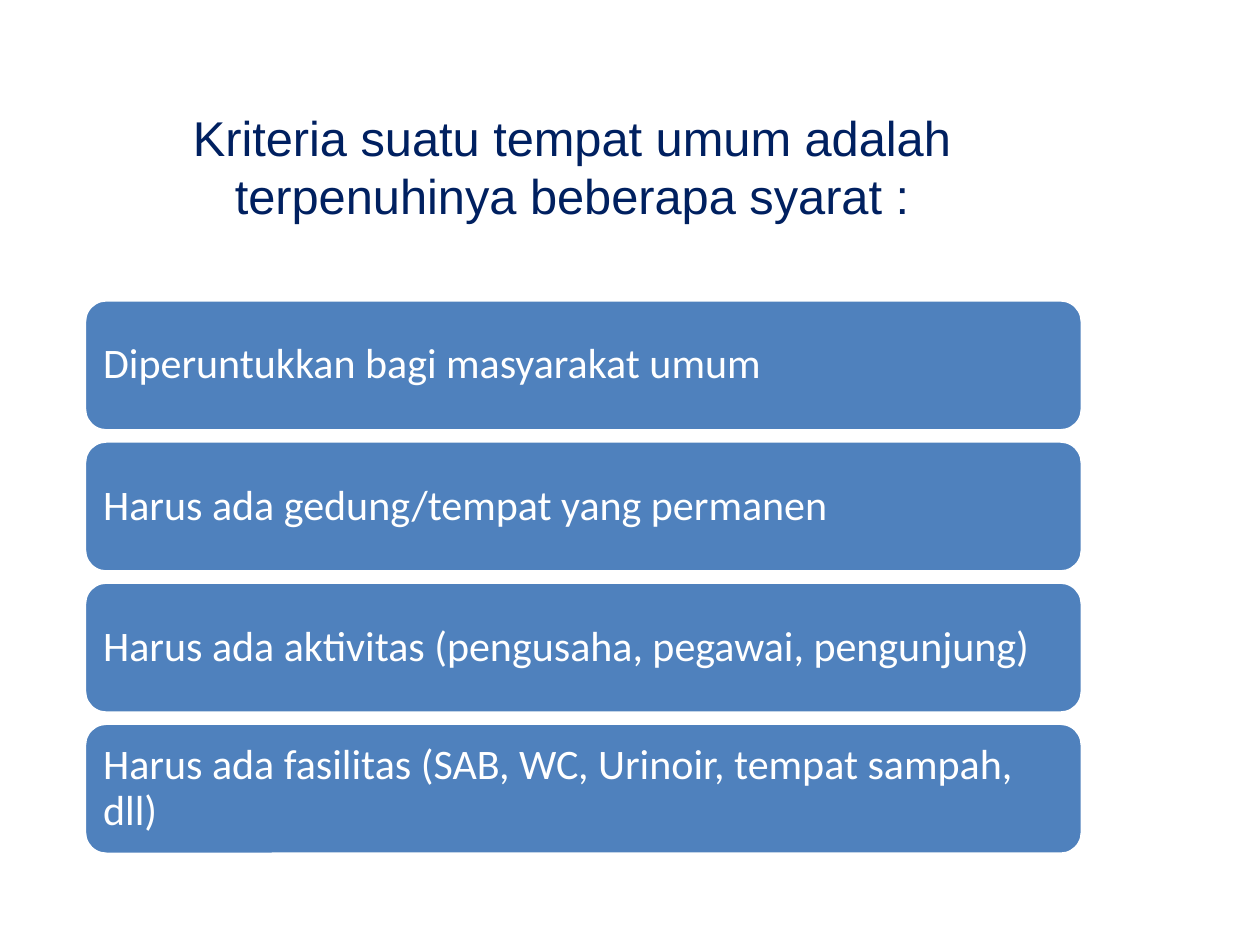
from dataclasses import dataclass

from pptx import Presentation
from pptx.dml.color import RGBColor
from pptx.enum.shapes import MSO_SHAPE
from pptx.enum.text import MSO_ANCHOR, MSO_AUTO_SIZE, PP_ALIGN
from pptx.util import Inches, Pt

ROUNDED = MSO_SHAPE.ROUNDED_RECTANGLE
TOP, MIDDLE = MSO_ANCHOR.TOP, MSO_ANCHOR.MIDDLE
LEFT, CENTER = PP_ALIGN.LEFT, PP_ALIGN.CENTER
NO_AUTOFIT = MSO_AUTO_SIZE.NONE
TITLE_ONLY = 5


@dataclass(frozen=True)
class Theme:
    navy: RGBColor = RGBColor(0x00, 0x20, 0x60)
    blue: RGBColor = RGBColor(0x4F, 0x81, 0xBD)
    white: RGBColor = RGBColor(0xFF, 0xFF, 0xFF)
    title_font: str = "Arial"
    body_font: str = "Calibri"
    title_size: Pt = Pt(27.9)
    body_size: Pt = Pt(24)


THEME = Theme()

TITLE = "Kriteria suatu tempat umum adalah terpenuhinya beberapa syarat :"
CRITERIA = [
    "Diperuntukkan bagi masyarakat umum",
    "Harus ada gedung/tempat yang permanen",
    "Harus ada aktivitas (pengusaha, pegawai, pengunjung)",
    "Harus ada fasilitas (SAB, WC, Urinoir, tempat sampah, dll)",
]

BAR_LEFT, BAR_TOP = 0.67, 2.38
BAR_WIDTH, BAR_HEIGHT = 7.92, 1.04
BAR_PITCH = 1.12


def style_paragraph(para, font, size, color, align, spacing):
    para.font.name = font
    para.font.size = size
    para.font.color.rgb = color
    para.alignment = align
    para.line_spacing = spacing


def set_title(page, text):
    title = page.shapes.title
    title.left, title.top = Inches(0.58), Inches(0.75)
    title.width, title.height = Inches(7.92), Inches(1.75)
    frame = title.text_frame
    frame.text = text
    frame.word_wrap = True
    frame.auto_size = NO_AUTOFIT
    frame.vertical_anchor = TOP
    frame.margin_top = Inches(0.11)
    style_paragraph(frame.paragraphs[0], THEME.title_font, THEME.title_size,
                    THEME.navy, CENTER, Pt(33))


def add_bar(page, top, text):
    bar = page.shapes.add_shape(ROUNDED, Inches(BAR_LEFT), Inches(top),
                                Inches(BAR_WIDTH), Inches(BAR_HEIGHT))
    bar.shadow.inherit = False
    bar.fill.solid()
    bar.fill.fore_color.rgb = THEME.blue
    bar.line.color.rgb = THEME.white
    bar.line.width = Pt(2)
    frame = bar.text_frame
    frame.text = text
    frame.word_wrap = True
    frame.vertical_anchor = MIDDLE
    frame.margin_left = frame.margin_right = Inches(0.1)
    frame.margin_top = frame.margin_bottom = Inches(0.1)
    style_paragraph(frame.paragraphs[0], THEME.body_font, THEME.body_size,
                    THEME.white, LEFT, 0.9)


def main():
    deck = Presentation()
    deck.slide_width, deck.slide_height = Inches(10), Inches(7.5)
    page = deck.slides.add_slide(deck.slide_layouts[TITLE_ONLY])

    # Heading
    set_title(page, TITLE)

    # Stack of criteria
    for row, text in enumerate(CRITERIA):
        add_bar(page, BAR_TOP + row * BAR_PITCH, text)

    deck.save("out.pptx")


if __name__ == "__main__":
    main()
